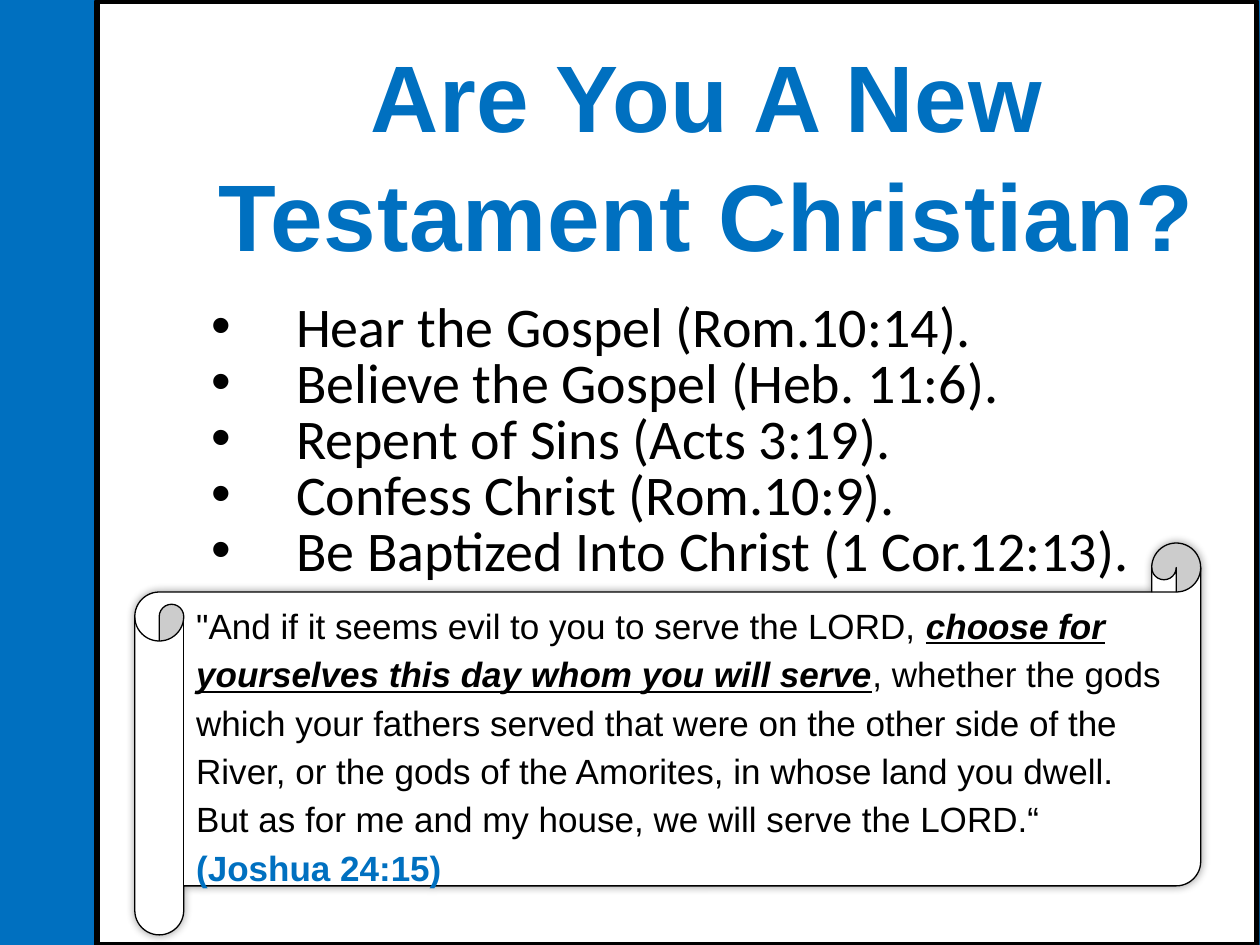
import pptx
import pptx.dml.color
import pptx.enum.shapes
import pptx.enum.text
import pptx.oxml
import pptx.oxml.ns
import pptx.util

Inches = pptx.util.Inches
Pt = pptx.util.Pt
COLORS = {"accent": "0070C0", "ink": "000000", "paper": "FFFFFF"}
STEPS = [
    "Hear the Gospel (Rom.10:14).",
    "Believe the Gospel (Heb. 11:6).",
    "Repent of Sins (Acts 3:19).",
    "Confess Christ (Rom.10:9).",
    "Be Baptized Into Christ (1 Cor.12:13).",
]
EMPHASIS = {"bold": True, "italic": True, "underline": True}
VERSE = [
    ('"And if it seems evil to you to serve the LORD, ', "ink", {}),
    ("choose for yourselves this day whom you will serve", "ink", EMPHASIS),
    (", whether the gods which your fathers served that were on the other side "
     "of the River, or the gods of the Amorites, in whose land you dwell. "
     "But as for me and my house, we will serve the LORD.“ ", "ink", {}),
    ("(Joshua 24:15)", "accent", {"bold": True}),
]


def rgb(name):
    """Return the named colour."""
    return pptx.dml.color.RGBColor.from_string(COLORS[name])


def set_values(target, values):
    """Set each attribute of the target from a dict."""
    for name, value in values.items():
        setattr(target, name, value)


def place(shape, left, top, width, height):
    """Move and size a shape in inches."""
    box = {"left": left, "top": top, "width": width, "height": height}
    set_values(shape, {name: Inches(value) for name, value in box.items()})


def add_run(paragraph, text, color, values):
    """Add a formatted run to a paragraph."""
    run = paragraph.add_run()
    run.text = text
    set_values(run.font, values)
    run.font.color.rgb = rgb(color)
    return run


def add_shadow(shape, blur, distance, angle, opacity):
    """Give a shape a soft outer shadow."""
    shape.shadow.inherit = False
    effects = shape._element.spPr.find(pptx.oxml.ns.qn("a:effectLst"))
    effects.append(pptx.oxml.parse_xml(
        f'<a:outerShdw {pptx.oxml.ns.nsdecls("a")} blurRad="{Pt(blur)}" '
        f'dist="{Pt(distance)}" dir="{angle * 60000}" algn="ctr" rotWithShape="0">'
        f'<a:srgbClr val="{COLORS["ink"]}"><a:alpha val="{opacity * 1000}"/>'
        "</a:srgbClr></a:outerShdw>"))


def add_panel(slide, kind, box, line_width, shadow):
    """Add a white outlined shape with a shadow."""
    panel = slide.shapes.add_shape(kind, *map(Inches, box))
    panel.fill.solid()
    panel.fill.fore_color.rgb = rgb("paper")
    panel.line.color.rgb = rgb("ink")
    panel.line.width = Pt(line_width)
    add_shadow(panel, *shadow)
    return panel


def write_verse(scroll):
    """Write the quotation on the scroll."""
    set_values(scroll.text_frame, {
        "word_wrap": True, "vertical_anchor": pptx.enum.text.MSO_ANCHOR.TOP})
    paragraph = scroll.text_frame.paragraphs[0]
    set_values(paragraph, {"alignment": pptx.enum.text.PP_ALIGN.LEFT,
                           "line_spacing": 1.15, "space_after": Pt(10)})
    for text, color, values in VERSE:
        add_run(paragraph, text, color, {"name": "Arial", "size": Pt(20), **values})


def write_title(title):
    """Place and write the title."""
    place(title, 1.25, 0.95, 8.72, 0.5)
    set_values(title.text_frame, {
        "word_wrap": True, "auto_size": pptx.enum.text.MSO_AUTO_SIZE.NONE,
        "vertical_anchor": pptx.enum.text.MSO_ANCHOR.MIDDLE})
    paragraph = title.text_frame.paragraphs[0]
    set_values(paragraph, {"alignment": pptx.enum.text.PP_ALIGN.CENTER,
                           "line_spacing": 1.05})
    run = add_run(paragraph, "Are You A New Testament Christian?", "accent",
                  {"name": "Arial", "size": Pt(54), "bold": True})
    run.font._element.set("spc", "50")


def write_steps(body):
    """Place and write the bulleted list."""
    place(body, 1.58, 2.34, 7.88, 2.25)
    frame = body.text_frame
    set_values(frame, {
        "word_wrap": True, "auto_size": pptx.enum.text.MSO_AUTO_SIZE.NONE,
        "margin_top": Inches(0.06), "margin_bottom": 0,
        "vertical_anchor": pptx.enum.text.MSO_ANCHOR.TOP})
    for index, step in enumerate(STEPS):
        paragraph = frame.add_paragraph() if index else frame.paragraphs[0]
        set_values(paragraph, {"line_spacing": Pt(32), "space_before": Pt(0)})
        properties = paragraph._element.get_or_add_pPr()
        properties.set("marL", str(Inches(0.67)))
        properties.set("indent", str(-Inches(0.67)))
        add_run(paragraph, step, "ink", {"name": "Calibri", "size": Pt(32)})


def main():
    """Build and save the slide."""
    presentation = pptx.Presentation()
    set_values(presentation, {"slide_width": Inches(10), "slide_height": Inches(7.5)})
    slide = presentation.slides.add_slide(presentation.slide_layouts[1])
    slide.background.fill.solid()
    slide.background.fill.fore_color.rgb = rgb("accent")
    title, body = slide.placeholders
    shape_kinds = pptx.enum.shapes.MSO_SHAPE
    add_panel(slide, shape_kinds.RECTANGLE, (0.77, 0.01, 9.2, 7.49), 3,
              (15, 18, 45, 30))
    scroll = add_panel(slide, shape_kinds.HORIZONTAL_SCROLL,
                       (1.07, 4.31, 8.46, 3.11), 0.75, (5, 0, 0, 40))
    write_verse(scroll)
    write_steps(body)
    write_title(title)
    for placeholder in (body, title):
        slide.shapes._spTree.append(placeholder._element)
    presentation.save("out.pptx")


if __name__ == "__main__":
    main()
